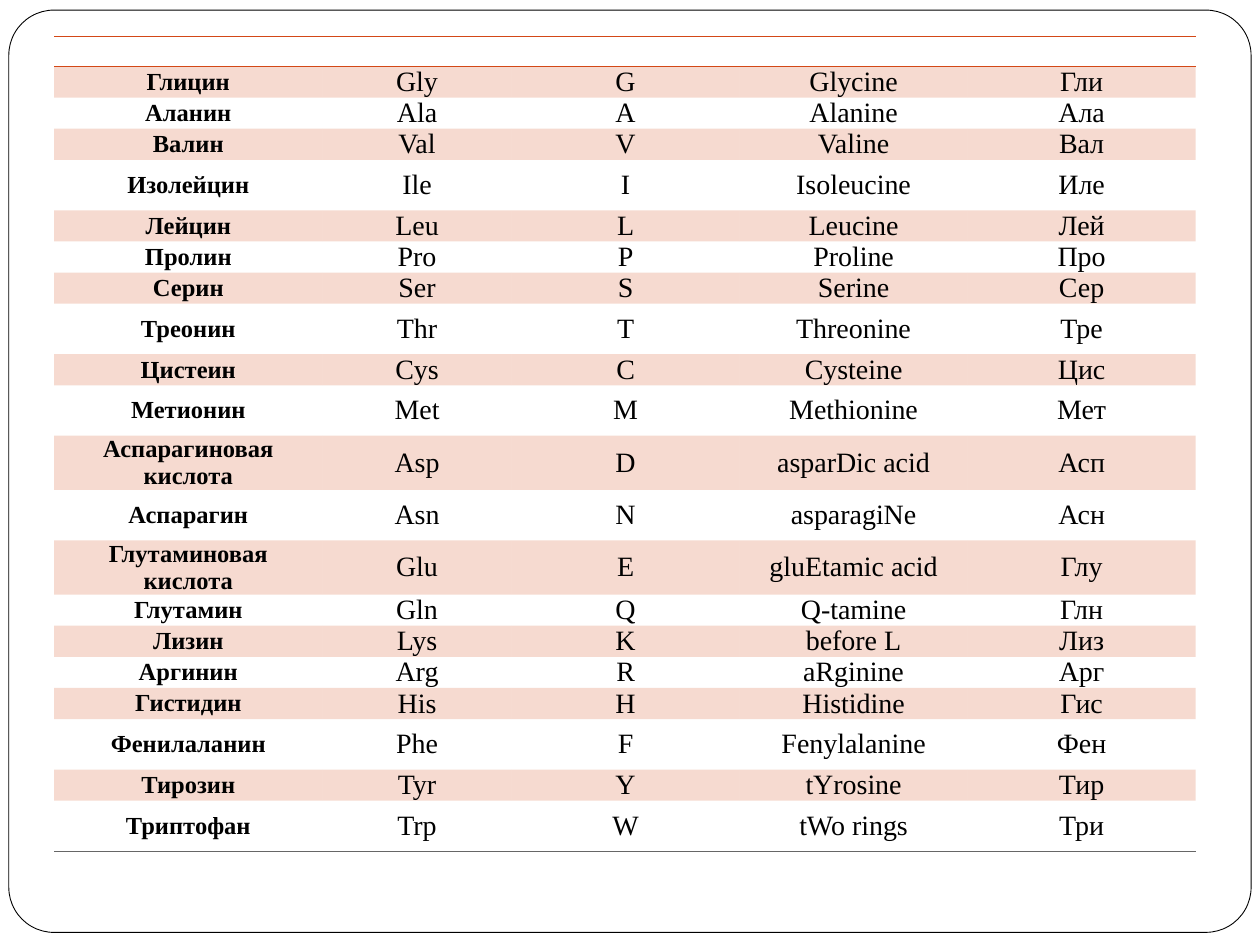
import pptx
import pptx.util
import pptx.dml.color
import pptx.enum.shapes
import pptx.enum.text
import pptx.oxml.ns
import lxml.etree

Inches, Pt = pptx.util.Inches, pptx.util.Pt
RGBColor = pptx.dml.color.RGBColor
qn = pptx.oxml.ns.qn

BLACK = RGBColor(0x00, 0x00, 0x00)
WHITE = RGBColor(0xFF, 0xFF, 0xFF)
RUST = RGBColor(0xD3, 0x48, 0x17)
GREY = RGBColor(0x66, 0x66, 0x66)
PLAIN = "{2D5ABB26-0587-4C30-8999-92F81FD0307C}"  # style without grid

WIDTHS = [2.13, 1.5, 1.81, 1.81, 1.81]
TALL = {4, 8, 10, 11, 12, 13, 18, 20}
ACIDS = [
    ("Глицин", "Gly", "G", "Glycine", "Гли"),
    ("Аланин", "Ala", "A", "Alanine", "Ала"),
    ("Валин", "Val", "V", "Valine", "Вал"),
    ("Изолейцин", "Ile", "I", "Isoleucine", "Иле"),
    ("Лейцин", "Leu", "L", "Leucine", "Лей"),
    ("Пролин", "Pro", "P", "Proline", "Про"),
    ("Серин", "Ser", "S", "Serine", "Сер"),
    ("Треонин", "Thr", "T", "Threonine", "Тре"),
    ("Цистеин", "Cys", "C", "Cysteine", "Цис"),
    ("Метионин", "Met", "M", "Methionine", "Мет"),
    ("Аспарагиновая кислота", "Asp", "D", "asparDic acid", "Асп"),
    ("Аспарагин", "Asn", "N", "asparagiNe", "Асн"),
    ("Глутаминовая кислота", "Glu", "E", "gluEtamic acid", "Глу"),
    ("Глутамин", "Gln", "Q", "Q-tamine", "Глн"),
    ("Лизин", "Lys", "K", "before L", "Лиз"),
    ("Аргинин", "Arg", "R", "aRginine", "Арг"),
    ("Гистидин", "His", "H", "Histidine", "Гис"),
    ("Фенилаланин", "Phe", "F", "Fenylalanine", "Фен"),
    ("Тирозин", "Tyr", "Y", "tYrosine", "Тир"),
    ("Триптофан", "Trp", "W", "tWo rings", "Три"),
]


class Deck:
    font = "Times New Roman"

    def __init__(self, slide):
        self.slide = slide

    def frame(self, left, top, width, height):
        box = self.slide.shapes.add_shape(
            pptx.enum.shapes.MSO_SHAPE.ROUNDED_RECTANGLE,
            Inches(left), Inches(top), Inches(width), Inches(height))
        box.adjustments[0] = 0.049
        box.shadow.inherit = False
        box.fill.solid()
        box.fill.fore_color.rgb = WHITE
        box.line.color.rgb = BLACK
        box.line.width = Pt(0.5)

    def edge(self, cell, tag, color, width):
        props = cell._tc.get_or_add_tcPr()
        line = lxml.etree.SubElement(props, qn(tag), w=str(Pt(width)))
        fill = lxml.etree.SubElement(line, qn("a:solidFill"))
        lxml.etree.SubElement(fill, qn("a:srgbClr"), val=str(color))

    def tint(self, cell, alpha):
        cell.fill.solid()
        cell.fill.fore_color.rgb = RUST
        color = cell._tc.tcPr.find(qn("a:solidFill")).find(qn("a:srgbClr"))
        lxml.etree.SubElement(color, qn("a:alpha"), val=str(alpha * 1000))

    def label(self, cell, text, size, bold):
        cell.vertical_anchor = pptx.enum.text.MSO_ANCHOR.MIDDLE
        cell.margin_left = cell.margin_right = Inches(0.07)
        cell.margin_top = cell.margin_bottom = 0
        para = cell.text_frame.paragraphs[0]
        para.alignment = pptx.enum.text.PP_ALIGN.CENTER
        if not text:
            # Text size of an empty cell keeps its row low
            lxml.etree.SubElement(para._p, qn("a:endParaRPr"),
                                  sz=str(size * 100))
            return
        run = para.add_run()
        run.text = text
        run.font.name = self.font
        run.font.size = Pt(size)
        run.font.bold = bold
        run.font.color.rgb = BLACK

    def table(self, left, top, height, widths, rows):
        shape = self.slide.shapes.add_table(
            len(rows), len(widths), Inches(left), Inches(top),
            Inches(sum(widths)), Inches(height))
        table = shape.table
        table._tbl.tblPr.find(qn("a:tableStyleId")).text = PLAIN
        for col, width in zip(table.columns, widths):
            col.width = Inches(width)
        last = len(rows) - 1
        for r, row in enumerate(rows):
            table.rows[r].height = Inches(0.4 if r in TALL else 0.2)
            for c, text in enumerate(row):
                cell = table.cell(r, c)
                head = c == 0 or r == 0
                self.label(cell, text, 14 if head else 16, head)
                # Rules above and below the head, and under the last row
                if r == 0:
                    self.edge(cell, "a:lnT", RUST, 1)
                    self.edge(cell, "a:lnB", RUST, 1)
                elif r == last:
                    self.edge(cell, "a:lnB", GREY, 0.5)
                # Odd rows are banded
                if r % 2:
                    self.tint(cell, 20)
                else:
                    cell.fill.background()
        shape.height = Inches(height)


def main():
    prs = pptx.Presentation()
    prs.slide_width, prs.slide_height = Inches(10), Inches(7.5)
    deck = Deck(prs.slides.add_slide(prs.slide_layouts[6]))

    # Rounded border
    deck.frame(0.07, 0.08, 9.86, 7.32)

    # Amino acids under an empty head row
    deck.table(0.43, 0.29, 6.77, WIDTHS, [("",) * len(WIDTHS)] + ACIDS)

    prs.save("out.pptx")


if __name__ == "__main__":
    main()
